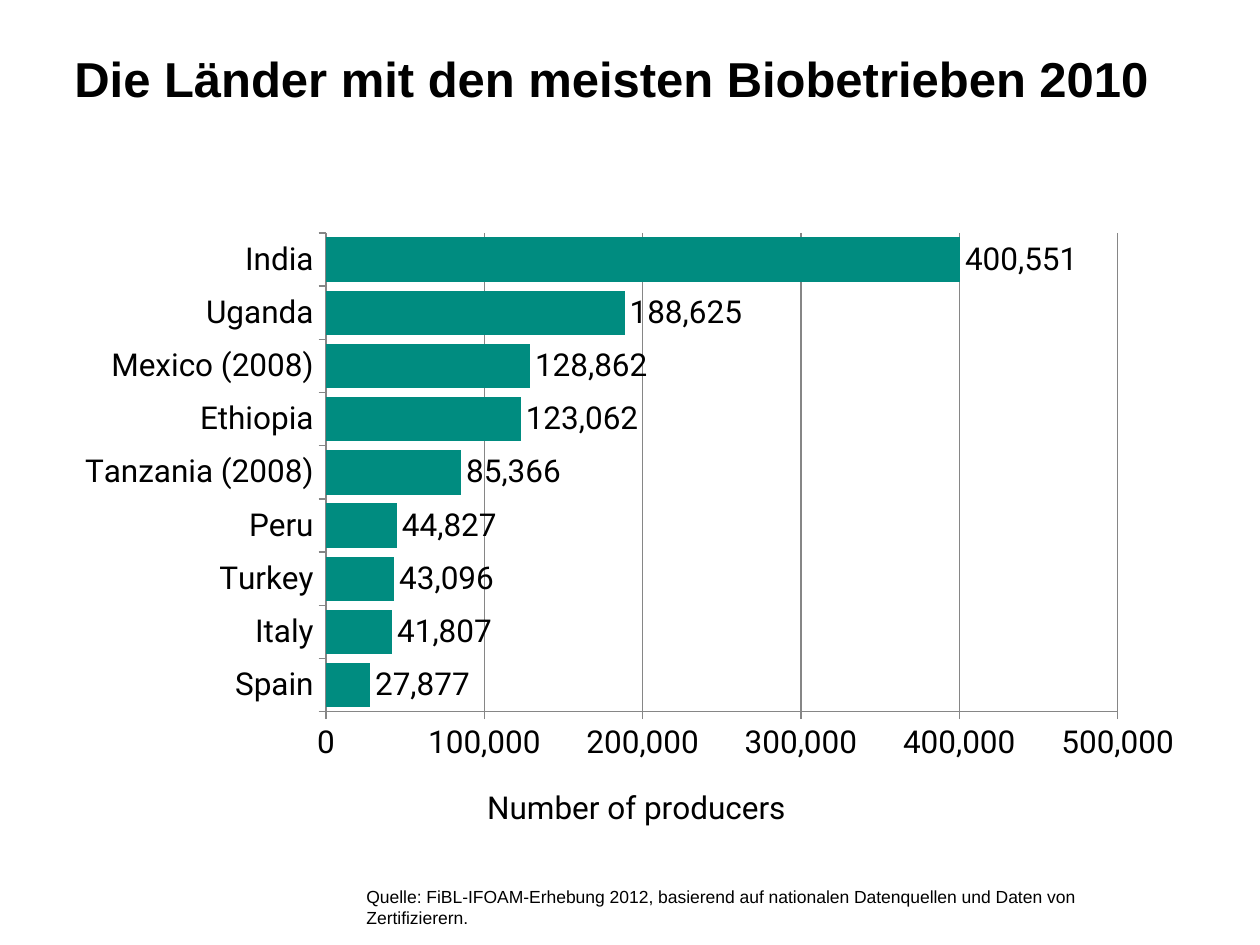
from lxml import etree
from pptx import Presentation
from pptx.chart.data import CategoryChartData
from pptx.dml.color import RGBColor
from pptx.enum.chart import XL_CHART_TYPE, XL_LABEL_POSITION, XL_TICK_MARK
from pptx.enum.text import MSO_ANCHOR
from pptx.oxml.ns import qn
from pptx.util import Inches, Pt

COLORS = {"text": "000000", "bar": "008C80", "grid": "868686"}
TITLE = "Die Länder mit den meisten Biobetrieben 2010"
SOURCE = ("Quelle: FiBL-IFOAM-Erhebung 2012, basierend auf nationalen "
          "Datenquellen und Daten von Zertifizierern.")
AXIS_TITLE = "Number of producers"
NUMBER_FORMAT = "#,##0"
PRODUCERS = [
    ("Spain", 27877),
    ("Italy", 41807),
    ("Turkey", 43096),
    ("Peru", 44827),
    ("Tanzania (2008)", 85366),
    ("Ethiopia", 123062),
    ("Mexico (2008)", 128862),
    ("Uganda", 188625),
    ("India", 400551),
]
CHART_BOX = (0.5, 1.75, 9, 4.95)
PLOT_BOX = (2.59, 1.85, 6.28, 3.8)
AXIS_TITLE_CORNER = (3.82, 6.2)


def color(name):
    return RGBColor.from_string(COLORS[name])


def style(font, name, size, bold=False):
    font.name, font.size, font.bold = name, Pt(size), bold
    font.color.rgb = color("text")


def add_text(slide, box, text, size, bold=False):
    frame = slide.shapes.add_textbox(*map(Inches, box)).text_frame
    frame.word_wrap = True
    frame.text = text
    style(frame.paragraphs[0].font, "Arial", size, bold)
    return frame


def place(element, index, box, inner=False):
    for old in element.findall(qn("c:layout")):
        element.remove(old)
    layout = etree.Element(qn("c:layout"))
    manual = etree.SubElement(layout, qn("c:manualLayout"))
    left, top, width, height = CHART_BOX
    fractions = [(box[0] - left) / width, (box[1] - top) / height]
    if inner:
        fractions += [box[2] / width, box[3] / height]
        etree.SubElement(manual, qn("c:layoutTarget"), val="inner")
    for tag in ("xMode", "yMode"):
        etree.SubElement(manual, qn(f"c:{tag}"), val="edge")
    for tag, fraction in zip("xywh", fractions):
        etree.SubElement(manual, qn(f"c:{tag}"), val=f"{fraction:.3f}")
    element.insert(index, layout)


def add_producer_chart(slide):
    data = CategoryChartData(number_format=NUMBER_FORMAT)
    data.categories = [country for country, _ in PRODUCERS]
    data.add_series("Series 1", [count for _, count in PRODUCERS])
    chart = slide.shapes.add_chart(
        XL_CHART_TYPE.BAR_CLUSTERED, *map(Inches, CHART_BOX), data).chart
    style(chart.font, "Roboto", 18)
    chart.has_legend = False
    chart.has_title = False

    countries, counts = chart.category_axis, chart.value_axis
    counts.minimum_scale, counts.maximum_scale = 0, 500000
    counts.major_unit = 100000
    counts.has_major_gridlines = True
    counts.tick_labels.number_format = NUMBER_FORMAT
    counts.tick_labels.number_format_is_linked = False
    for axis in (countries, counts):
        axis.major_tick_mark = XL_TICK_MARK.OUTSIDE
    for part in (countries, counts, counts.major_gridlines):
        part.format.line.color.rgb = color("grid")
        part.format.line.width = Pt(0.75)

    caption = counts.axis_title.text_frame
    caption.text = AXIS_TITLE
    style(caption.paragraphs[0].font, "Roboto", 18)

    plot = chart.plots[0]
    plot.gap_width = 20
    plot.vary_by_categories = False
    bars = plot.series[0].format
    bars.fill.solid()
    bars.fill.fore_color.rgb = color("bar")
    plot.has_data_labels = True
    labels = plot.data_labels
    labels.show_value = True
    labels.position = XL_LABEL_POSITION.OUTSIDE_END
    labels.number_format = NUMBER_FORMAT
    labels.number_format_is_linked = False
    style(labels.font, "Roboto", 18)

    plot_area = chart.element.find(".//" + qn("c:plotArea"))
    place(plot_area, 0, PLOT_BOX, inner=True)
    place(plot_area.find(".//" + qn("c:title")), 1, AXIS_TITLE_CORNER)


def main():
    deck = Presentation()
    deck.slide_width, deck.slide_height = Inches(10), Inches(7.5)
    slide = deck.slides.add_slide(deck.slide_layouts[6])
    heading = add_text(slide, (0.59, 0.25, 9.02, 0.78), TITLE, 28, bold=True)
    heading.vertical_anchor = MSO_ANCHOR.MIDDLE
    heading.margin_left = heading.margin_top = 0
    add_producer_chart(slide)
    add_text(slide, (2.81, 6.98, 5.83, 0.44), SOURCE, 10)
    deck.save("out.pptx")


if __name__ == "__main__":
    main()
